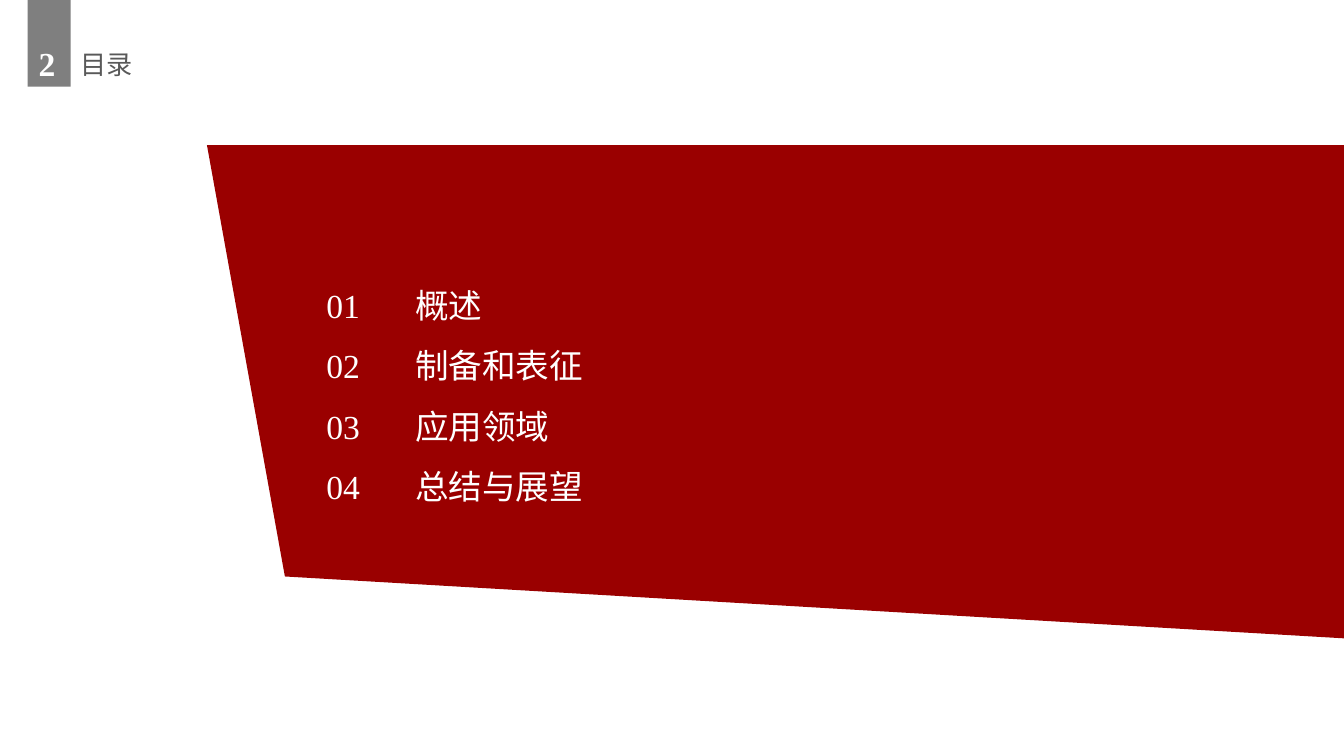
from lxml import etree
from pptx import Presentation
from pptx.dml.color import RGBColor
from pptx.enum.shapes import MSO_SHAPE
from pptx.enum.text import MSO_AUTO_SIZE
from pptx.oxml.ns import qn
from pptx.util import Inches, Pt

RECT = MSO_SHAPE.RECTANGLE
GROW = MSO_AUTO_SIZE.SHAPE_TO_FIT_TEXT
COLORS = {"red": "9A0000", "gray": "7F7F7F", "title": "595959", "white": "FFFFFF"}
SANS, SERIF = "Noto Sans CJK SC", "Times New Roman"

# Widescreen 16:9 slide
prs = Presentation()
prs.slide_width = Inches(10)
prs.slide_height = Inches(10 * 9 / 16)
s = prs.slides.add_slide(prs.slide_layouts[6])


def add_text(lines, box, font=SANS, size=18, color="white", bold=False, spacing=None):
    tb = s.shapes.add_textbox(*(Inches(v) for v in box))
    tf = tb.text_frame
    tf.word_wrap = True
    tf.auto_size = GROW
    for i, line in enumerate(lines):
        p = tf.add_paragraph() if i else tf.paragraphs[0]
        p.line_spacing = spacing
        r = p.add_run()
        r.text = line
        r.font.size = Pt(size)
        r.font.bold = bold
        r.font.color.rgb = RGBColor.from_string(COLORS[color])
        r.font.name = font
        # East Asian characters take their font from a:ea
        etree.SubElement(r.font._element, qn("a:ea"), typeface=font)


def paint(sp, color):
    sp.shadow.inherit = False
    sp.fill.solid()
    sp.fill.fore_color.rgb = RGBColor.from_string(COLORS[color])
    sp.line.fill.background()


# Red panel, running off the right edge
corners = [(1.54, 1.08), (10.51, 1.08), (10.51, 4.78), (2.12, 4.29)]
points = [(Inches(x), Inches(y)) for x, y in corners]
fb = s.shapes.build_freeform(*points[0])
fb.add_line_segments(points[1:], close=True)
paint(fb.convert_to_shape(), "red")

# Page number tab and slide title
tab = s.shapes.add_shape(RECT, Inches(0.03), Inches(0.15), Inches(0.67), Inches(0.32))
tab.rotation = 90
paint(tab, "gray")
add_text(["2"], (0.19, 0.27, 0.47, 0.4), font=SERIF, bold=True)
add_text(["目录"], (0.5, 0.31, 5.64, 0.34), size=14, color="title")

# Contents: topics and their numbers
topics = ["概述", "制备和表征", "应用领域", "总结与展望"]
numbers = [f"{n:02d}" for n in range(1, len(topics) + 1)]
add_text(topics, (2.99, 1.92, 5.83, 1.85), spacing=1.5)
add_text(numbers, (2.33, 1.92, 0.93, 1.86), font=SERIF, spacing=1.5)

prs.save("out.pptx")
